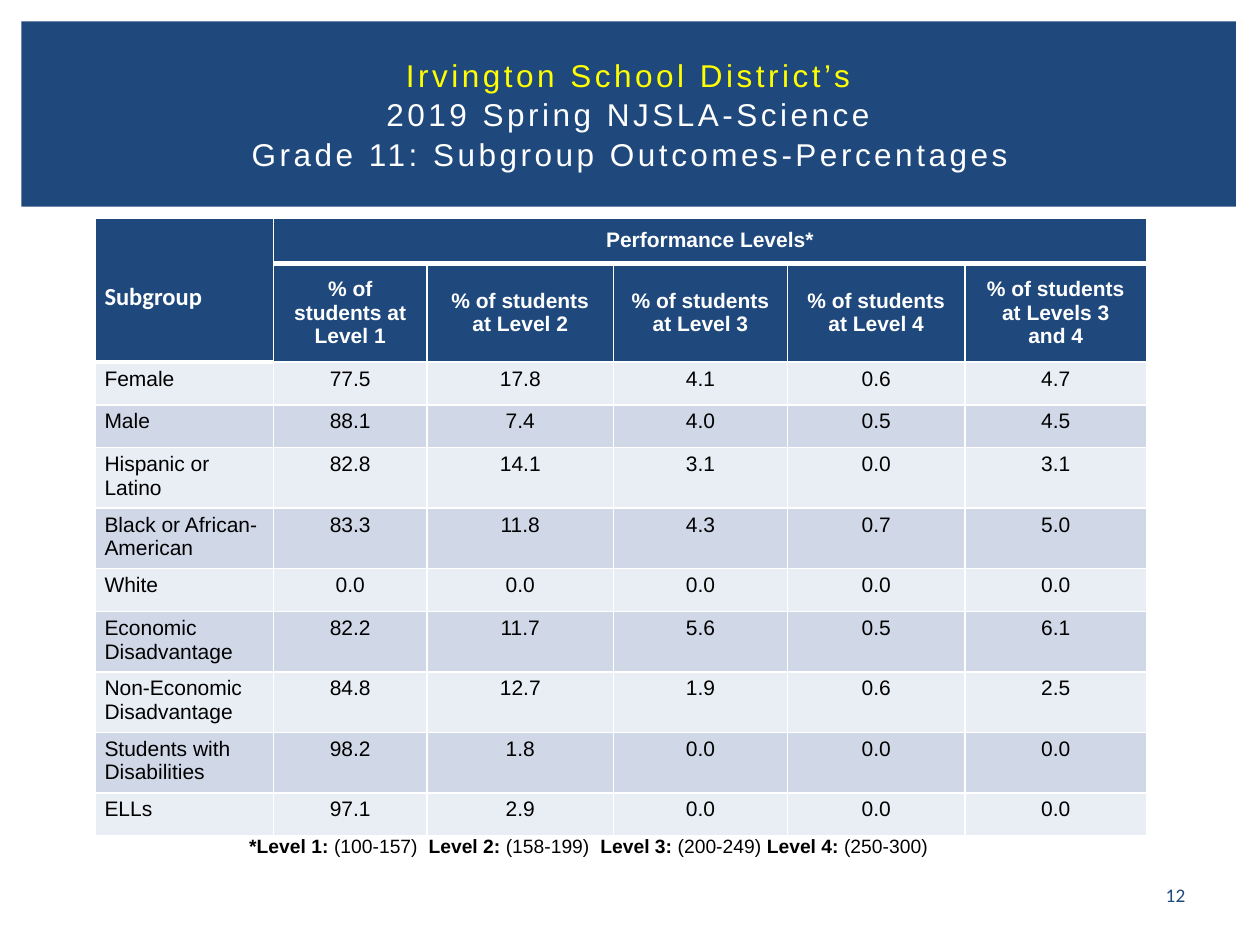
"""Build the slide of Grade 11 science outcomes by subgroup."""
from dataclasses import dataclass
from typing import NamedTuple

from lxml import etree
from pptx import Presentation
from pptx.dml.color import RGBColor
from pptx.enum.shapes import MSO_SHAPE
from pptx.enum.text import MSO_ANCHOR, PP_ALIGN
from pptx.oxml.ns import qn
from pptx.util import Inches, Pt

RECT = MSO_SHAPE.RECTANGLE
TOP, MIDDLE = MSO_ANCHOR.TOP, MSO_ANCHOR.MIDDLE
LEFT, CENTER = PP_ALIGN.LEFT, PP_ALIGN.CENTER


@dataclass(frozen=True)
class Theme:
    navy: str = "1F497D"
    white: str = "FFFFFF"
    yellow: str = "FFFF00"
    black: str = "000000"
    bands: tuple = ("E9EDF4", "D0D8E8")
    font: str = "Arial"
    alt: str = "Calibri"
    title: int = 18
    label: int = 14
    body: int = 12
    note: int = 11


class Run(NamedTuple):
    text: str
    bold: bool = False
    color: str = ""


class Group(NamedTuple):
    name: str
    rates: tuple
    tall: bool = False


class Pad(NamedTuple):
    side: float
    top: float
    base: float


THEME = Theme()
HEAD_PAD = Pad(0.14, 0.05, 0.05)
BODY_PAD = Pad(0.07, 0.04, 0.04)
LABEL_PAD = Pad(0.07, 0.51, 0.04)
WIDTHS = (1.41, 1.22, 1.48, 1.38, 1.41, 1.44)
HEAD_ROWS = (0.36, 0.78)
SHORT, TALL = 0.34, 0.45
LEVELS = ("Level 1", "Level 2", "Level 3", "Level 4", "Levels 3 and 4")
GROUPS = (
    Group("Female", (77.5, 17.8, 4.1, 0.6, 4.7)),
    Group("Male", (88.1, 7.4, 4.0, 0.5, 4.5)),
    Group("Hispanic or Latino", (82.8, 14.1, 3.1, 0.0, 3.1), True),
    Group("Black or African-American", (83.3, 11.8, 4.3, 0.7, 5.0), True),
    Group("White", (0.0, 0.0, 0.0, 0.0, 0.0)),
    Group("Economic Disadvantage", (82.2, 11.7, 5.6, 0.5, 6.1), True),
    Group("Non-Economic Disadvantage", (84.8, 12.7, 1.9, 0.6, 2.5), True),
    Group("Students with Disabilities", (98.2, 1.8, 0.0, 0.0, 0.0), True),
    Group("ELLs", (97.1, 2.9, 0.0, 0.0, 0.0)),
)
TITLE = (
    Run("Irvington School District’s\n", color=THEME.yellow),
    Run("2019 Spring NJSLA-Science\nGrade 11: Subgroup Outcomes-Percentages"),
)
NOTE = (
    Run("*Level 1:", True), Run(" (100-157)  "),
    Run("Level 2:", True), Run(" (158-199)  "),
    Run("Level 3: ", True), Run("(200-249) "),
    Run("Level 4:", True), Run(" (250-300)"),
)


def write(frame, runs, *, size: int, color: str, font: str = THEME.font,
          align=LEFT, track: int = 0, lead: float = 1.0) -> None:
    """Write the runs as one formatted paragraph."""
    para = frame.paragraphs[0]
    para.alignment, para.line_spacing = align, lead
    for item in runs:
        for index, line in enumerate(item.text.split("\n")):
            if index:
                para.add_line_break()
            if not line:
                continue
            run = para.add_run()
            run.text = line
            run.font.name, run.font.size = font, Pt(size)
            run.font.bold = item.bold
            run.font.color.rgb = RGBColor.from_string(item.color or color)
            if track:
                run.font._element.set("spc", str(track * 100))


def add_text(slide, box: tuple, runs, *, anchor=TOP, **form) -> None:
    """Add a wrapped text box."""
    frame = slide.shapes.add_textbox(*map(Inches, box)).text_frame
    frame.word_wrap, frame.vertical_anchor = True, anchor
    write(frame, runs, **form)


def add_band(slide, box: tuple) -> None:
    """Add the plain band behind the title."""
    band = slide.shapes.add_shape(RECT, *map(Inches, box))
    band.shadow.inherit = False
    band.fill.solid()
    band.fill.fore_color.rgb = RGBColor.from_string(THEME.navy)
    band.line.fill.background()


def edge(cell, base: float) -> None:
    """Draw white cell borders with the given bottom width."""
    props = cell._tc.get_or_add_tcPr()
    for side, width in (("L", 1), ("R", 1), ("T", 1), ("B", base)):
        line = etree.SubElement(props, qn(f"a:ln{side}"), w=str(Pt(width)))
        fill = etree.SubElement(line, qn("a:solidFill"))
        etree.SubElement(fill, qn("a:srgbClr"), val=THEME.white)


def fill_cell(cell, run: Run, pad: Pad, *, fill: str, anchor=TOP,
              base: float = 1, **form) -> None:
    """Style one cell and write its text."""
    edge(cell, base)
    cell.fill.solid()
    cell.fill.fore_color.rgb = RGBColor.from_string(fill)
    cell.margin_left = cell.margin_right = Inches(pad.side)
    cell.margin_top, cell.margin_bottom = Inches(pad.top), Inches(pad.base)
    cell.vertical_anchor = anchor
    write(cell.text_frame, [run], **form)


def add_grid(slide, left: float, top: float) -> None:
    """Add the table of subgroup outcomes."""
    rows = HEAD_ROWS + tuple(TALL if g.tall else SHORT for g in GROUPS)
    box = (left, top, sum(WIDTHS), sum(rows))
    grid = slide.shapes.add_table(
        len(rows), len(WIDTHS), *map(Inches, box)).table
    for col, width in zip(grid.columns, WIDTHS):
        col.width = Inches(width)
    for row, height in zip(grid.rows, rows):
        row.height = Inches(height)
    grid.cell(0, 0).merge(grid.cell(1, 0))
    grid.cell(0, 1).merge(grid.cell(0, len(LEVELS)))

    head = dict(fill=THEME.navy, color=THEME.white)
    mid = dict(head, anchor=MIDDLE, align=CENTER, size=THEME.body)
    fill_cell(grid.cell(0, 0), Run("Subgroup", True), LABEL_PAD, base=3,
              font=THEME.alt, size=THEME.label, **head)
    fill_cell(grid.cell(0, 1), Run("Performance Levels*", True), HEAD_PAD,
              base=3, **mid)
    for col, level in enumerate(LEVELS, 1):
        fill_cell(grid.cell(1, col), Run(f"% of students at {level}", True),
                  HEAD_PAD, **mid)
    for index, group in enumerate(GROUPS):
        texts = (group.name, *(f"{rate:.1f}" for rate in group.rates))
        for col, text in enumerate(texts):
            fill_cell(grid.cell(index + len(HEAD_ROWS), col), Run(text),
                      BODY_PAD, fill=THEME.bands[index % 2],
                      color=THEME.black, size=THEME.body,
                      align=CENTER if col else LEFT)


def main() -> None:
    """Build and save the slide."""
    deck = Presentation()
    deck.slide_width, deck.slide_height = Inches(10), Inches(7.5)
    slide = deck.slides.add_slide(deck.slide_layouts[6])
    add_band(slide, (0.17, 0.17, 9.64, 1.47))
    add_text(slide, (1.46, 0.39, 7.08, 1.02), TITLE, anchor=MIDDLE,
             align=CENTER, size=THEME.title, color=THEME.white,
             track=2, lead=1.05)
    add_grid(slide, 0.76, 1.73)
    add_text(slide, (9.01, 6.95, 0.64, 0.3), [Run("12")], anchor=MIDDLE,
             align=CENTER, size=THEME.note, color=THEME.navy, font=THEME.alt)
    add_text(slide, (1.88, 6.57, 6.24, 0.29), NOTE, size=THEME.note,
             color=THEME.black)
    deck.save("out.pptx")


if __name__ == "__main__":
    main()
